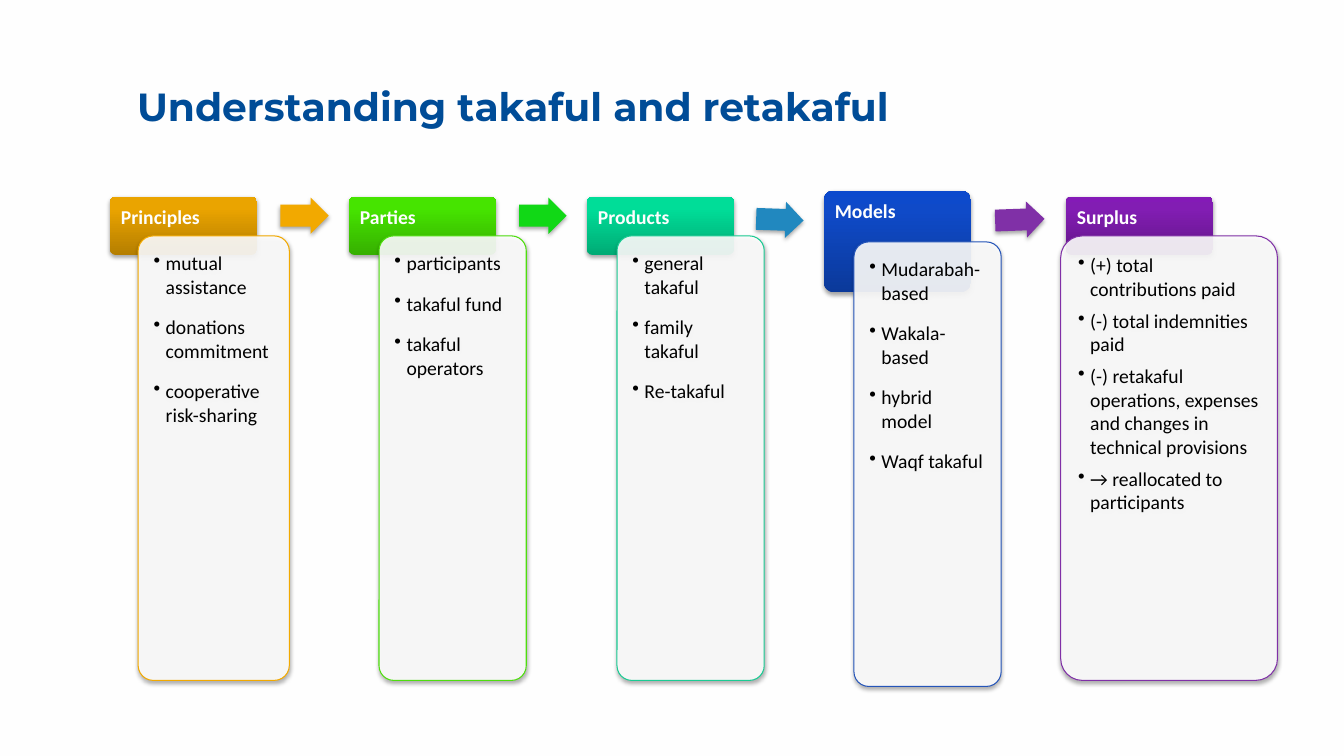
from dataclasses import dataclass

import pptx
import pptx.dml.color
import pptx.enum.shapes
import pptx.enum.text
import pptx.oxml
import pptx.oxml.ns
import pptx.util

Inches = pptx.util.Inches
Pt = pptx.util.Pt
Preset = pptx.enum.shapes.MSO_SHAPE
Anchor = pptx.enum.text.MSO_ANCHOR
Align = pptx.enum.text.PP_ALIGN


@dataclass(frozen=True)
class Theme:
    background: str = "FEFEFE"
    title: str = "004C97"
    body: str = "000000"
    light: str = "FEFEFE"
    title_font: str = "Montserrat"
    body_font: str = "Calibri"
    title_size: int = 28
    body_size: int = 14


@dataclass(frozen=True)
class Box:
    left: float
    top: float
    width: float
    height: float

    def lengths(self):
        return [Inches(value) for value in (self.left, self.top, self.width, self.height)]


@dataclass(frozen=True)
class Column:
    name: str
    points: tuple
    left: float
    gradient: tuple  # bottom, near the top, top
    outline: str
    top: float = 1.95
    header_height: float = 0.58
    card_shift: float = 0.3
    card_drop: float = 0.39
    card_width: float = 1.46
    space_after: int = 12


THEME = Theme()
HEADER_WIDTH = 1.46
CARD_HEIGHT = 4.41
INSET = 0.11
CORNER = 0.1
CORNER_INSET = 0.29 * CORNER  # text inset of a rounded corner, per inch of short side

COLUMNS = (
    Column("Principles", ("mutual assistance", "donations commitment", "cooperative risk-sharing"),
           1.09, ("B57E00", "EAA400", "ECA500"), "F2A900", card_shift=0.28, card_width=1.5),
    Column("Parties", ("participants", "takaful fund", "takaful operators"),
           3.46, ("36B000", "46E400", "47E500"), "4EDE0D"),
    Column("Products", ("general takaful", "family takaful", "Re-takaful"),
           5.82, ("00AB75", "00DD98", "00DE98"), "1ACB93"),
    Column("Models", ("Mudarabah-based", "Wakala-based", "hybrid model", "Waqf takaful"),
           8.17, ("0B399A", "0F4AC8", "0B49CD"), "2555B9",
           top=1.89, header_height=1.01, card_drop=0.51),
    Column("Surplus", ("(+) total contributions paid", "(-) total indemnities paid",
                       "(-) retakaful operations, expenses and changes in technical provisions",
                       "→ reallocated to participants"),
           10.57, ("64168A", "821DB3", "841AB7"), "8030A7",
           card_shift=-0.05, card_width=2.15, space_after=6),
)

# Arrow box, colour and rotation
ARROWS = (
    (Box(2.78, 1.96, 0.48, 0.36), "F2A900", 0),
    (Box(5.15, 1.96, 0.47, 0.36), "11D816", 0),
    (Box(7.5, 2, 0.47, 0.36), "2188BF", 2),
    (Box(9.87, 2, 0.49, 0.36), "8030A7", 358),
)


def rgb(value):
    return pptx.dml.color.RGBColor.from_string(value)


def xml(markup):
    """Parse one DrawingML element written with the a: prefix."""
    tag, rest = markup.split(">", 1)
    return pptx.oxml.parse_xml(f"{tag} {pptx.oxml.ns.nsdecls('a')}>{rest}")


def format_runs(paragraph, font_name, size, color, bold=False):
    for run in paragraph.runs:
        run.font.name = font_name
        run.font.size = Pt(size)
        run.font.bold = bold
        run.font.color.rgb = rgb(color)


def set_frame(text_frame, side, top, anchor):
    text_frame.word_wrap = True
    text_frame.auto_size = pptx.enum.text.MSO_AUTO_SIZE.NONE
    text_frame.vertical_anchor = anchor
    text_frame.margin_left = text_frame.margin_right = Inches(side)
    text_frame.margin_top = text_frame.margin_bottom = Inches(top)


def add_shadowed_shape(slide, preset, box, color, adjustments):
    shape = slide.shapes.add_shape(preset, *box.lengths())
    for index, value in enumerate(adjustments):
        shape.adjustments[index] = value
    shape.fill.solid()
    shape.fill.fore_color.rgb = rgb(color)
    shape.line.fill.background()
    shape.shadow.inherit = False
    effects = shape._element.spPr.find(pptx.oxml.ns.qn("a:effectLst"))
    effects.append(xml(
        '<a:outerShdw blurRad="39370" dist="22860" dir="5400000" rotWithShape="0">'
        '<a:srgbClr val="000000"><a:alpha val="35000"/></a:srgbClr></a:outerShdw>'))
    return shape


def add_header(slide, box, name, gradient):
    shape = add_shadowed_shape(slide, Preset.ROUNDED_RECTANGLE, box, gradient[0], [CORNER])
    stops = "".join(f'<a:gs pos="{position}"><a:srgbClr val="{color}"/></a:gs>'
                    for position, color in zip((0, 80000, 100000), gradient))
    properties = shape._element.spPr
    properties.replace(
        properties.find(pptx.oxml.ns.qn("a:solidFill")),
        xml(f'<a:gradFill rotWithShape="1"><a:gsLst>{stops}</a:gsLst>'
            '<a:lin ang="16200000" scaled="0"/></a:gradFill>'))
    inset = INSET - CORNER_INSET * min(box.width, box.height)
    set_frame(shape.text_frame, inset, inset, Anchor.TOP)
    paragraph = shape.text_frame.paragraphs[0]
    paragraph.text = name
    paragraph.alignment = Align.LEFT
    paragraph.line_spacing = 0.9
    format_runs(paragraph, THEME.body_font, THEME.body_size, THEME.light, bold=True)


def add_card(slide, box, points, outline, space_after):
    shape = add_shadowed_shape(slide, Preset.ROUNDED_RECTANGLE, box, THEME.light, [CORNER])
    color = shape._element.spPr.find(pptx.oxml.ns.qn("a:solidFill"))[0]
    color.append(xml('<a:alpha val="90000"></a:alpha>'))
    shape.line.color.rgb = rgb(outline)
    shape.line.width = Pt(0.75)
    set_frame(shape.text_frame, INSET, INSET, Anchor.TOP)
    shape.text_frame.text = "\n".join(points)
    for paragraph in shape.text_frame.paragraphs:
        paragraph.alignment = Align.LEFT
        paragraph.space_after = Pt(space_after)
        format_runs(paragraph, THEME.body_font, THEME.body_size, THEME.body)
        properties = paragraph._p.get_or_add_pPr()
        properties.set("marL", str(Inches(0.12)))
        properties.set("indent", str(-Inches(0.12)))
        properties.append(xml('<a:buChar char="•"></a:buChar>'))


def add_column(slide, column):
    header = Box(column.left, column.top, HEADER_WIDTH, column.header_height)
    card = Box(header.left + column.card_shift, header.top + column.card_drop,
               column.card_width, CARD_HEIGHT)
    add_header(slide, header, column.name, column.gradient)
    add_card(slide, card, column.points, column.outline, column.space_after)


def add_arrow(slide, box, color, rotation):
    shape = add_shadowed_shape(slide, Preset.RIGHT_ARROW, box, color, [0.6, 0.5])
    shape.rotation = rotation


def set_title(slide, box, text):
    title = slide.shapes.title
    title.left, title.top, title.width, title.height = box.lengths()
    set_frame(title.text_frame, 0, 0, Anchor.MIDDLE)
    paragraph = title.text_frame.paragraphs[0]
    paragraph.text = text
    paragraph.alignment = Align.LEFT
    paragraph.line_spacing = 0.9
    format_runs(paragraph, THEME.title_font, THEME.title_size, THEME.title, bold=True)


def main():
    presentation = pptx.Presentation()
    presentation.slide_width = Inches(13.33)
    presentation.slide_height = Inches(7.5)
    slide = presentation.slides.add_slide(presentation.slide_layouts.get_by_name("Title Only"))
    slide.background.fill.solid()
    slide.background.fill.fore_color.rgb = rgb(THEME.background)

    # Title
    set_title(slide, Box(1.36, 0.54, 10.62, 1.07), "Understanding takaful and retakaful")
    # Process columns
    for column in COLUMNS:
        add_column(slide, column)
    # Arrows between the columns
    for box, color, rotation in ARROWS:
        add_arrow(slide, box, color, rotation)

    presentation.save("out.pptx")


if __name__ == "__main__":
    main()
